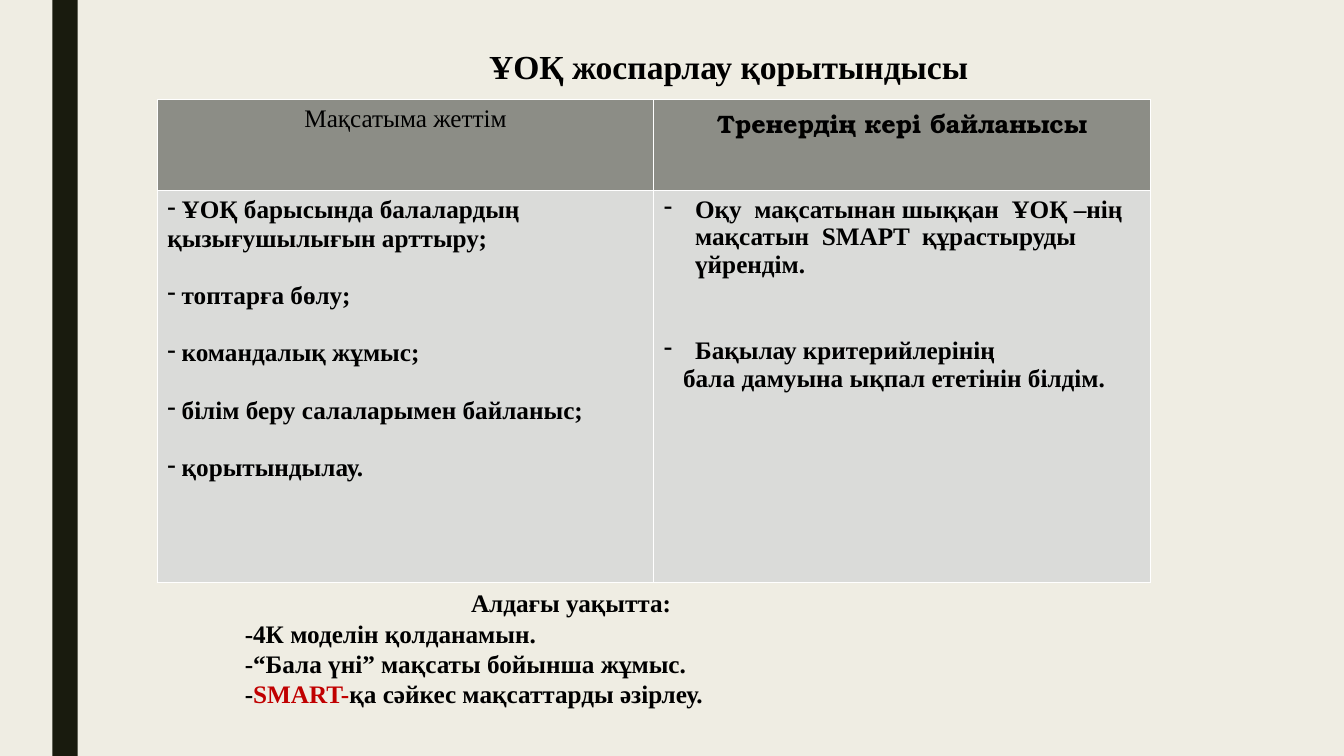
import pptx
import pptx.util
import pptx.dml.color
import pptx.enum.shapes
import pptx.enum.text
import pptx.oxml
import pptx.oxml.ns
from pptx.util import Inches

SERIF = "Times New Roman"
ALIGN = pptx.enum.text.PP_ALIGN
GOALS = [
    "ҰОҚ барысында балалардың қызығушылығын арттыру;",
    "топтарға бөлу;",
    "командалық жұмыс;",
    "білім беру салаларымен байланыс;",
    "қорытындылау.",
]
NOTES = [
    "Оқу  мақсатынан шыққан  ҰОҚ –нің  мақсатын  SMAPT  құрастыруды үйрендім.",
    "Бақылау критерийлерінің",
]
PLANS = [
    [("-4К моделін қолданамын.", "000000")],
    [("-“Бала үні” мақсаты бойынша жұмыс.", "000000")],
    [("-", "000000"), ("SMART-", "C00000"),
     ("қа сәйкес мақсаттарды әзірлеу.", "000000")],
]


def paint(fill, tone):
    """Fill with a solid colour given as hex."""
    fill.solid()
    fill.fore_color.rgb = pptx.dml.color.RGBColor.from_string(tone)


def write(para, text, size=18, bold=True, face=SERIF, tone="000000"):
    """Add one formatted run to a paragraph."""
    run = para.add_run()
    run.text = text
    run.font.size = pptx.util.Pt(size)
    run.font.bold = bold
    run.font.name = face
    paint(run.font.fill, tone)


def extend(frame, first):
    """Return the first paragraph, or a new one after it."""
    return frame.paragraphs[0] if first else frame.add_paragraph()


def inset(para, left=0, hang=0, mark=None):
    """Set the indents of a paragraph and its bullet."""
    props = para._p.get_or_add_pPr()
    props.set("marL", str(Inches(left)))
    props.set("indent", str(Inches(-hang)))
    if mark:
        bullet = props.makeelement(pptx.oxml.ns.qn("a:buChar"), {"char": mark})
        props.append(bullet)


def edge(cell):
    """Draw thin white borders round a cell."""
    props = cell._tc.get_or_add_tcPr()
    for spot, side in enumerate("LRTB"):
        line = pptx.oxml.parse_xml(
            f'<a:ln{side} {pptx.oxml.ns.nsdecls("a")} w="12700"><a:solidFill>'
            f'<a:srgbClr val="FFFFFF"/></a:solidFill></a:ln{side}>')
        props.insert(spot, line)


def add_bar(slide, left, top, width, height):
    """Draw the dark vertical bar."""
    bar = slide.shapes.add_shape(
        pptx.enum.shapes.MSO_SHAPE.RECTANGLE, left, top, width, height)
    bar.shadow.inherit = False
    paint(bar.fill, "191B0E")
    bar.line.fill.background()


def add_title(slide, left, top, width, height):
    """Place and write the title."""
    title = slide.shapes.title
    title.left, title.top, title.width, title.height = left, top, width, height
    frame = title.text_frame
    frame.word_wrap = False
    frame.auto_size = pptx.enum.text.MSO_AUTO_SIZE.NONE
    frame.vertical_anchor = pptx.enum.text.MSO_ANCHOR.TOP
    para = frame.paragraphs[0]
    para.alignment = ALIGN.LEFT
    write(para, "ҰОҚ жоспарлау қорытындысы", 24)


def add_grid(slide, left, top, width, height):
    """Build the table of goals and feedback."""
    grid = slide.shapes.add_table(2, 2, left, top, width, height).table
    grid.rows[0].height = Inches(0.9)
    grid.rows[1].height = height - Inches(0.9)
    for row, tone in enumerate(["8C8D86", "DADBD9"]):
        for col in range(2):
            paint(grid.cell(row, col).fill, tone)
            edge(grid.cell(row, col))
    heads = [("Мақсатыма жеттім", False, SERIF),
             ("Тренердің кері байланысы", True, "TeX Gyre Bonum")]
    for col, (text, bold, face) in enumerate(heads):
        para = grid.cell(0, col).text_frame.paragraphs[0]
        para.alignment = ALIGN.CENTER
        write(para, text, 18, bold, face)
    fill_goals(grid.cell(1, 0).text_frame)
    fill_notes(grid.cell(1, 1).text_frame)


def fill_goals(frame):
    """List the goals with even gaps."""
    for spot, goal in enumerate(GOALS):
        para = extend(frame, spot == 0)
        para.space_after = pptx.util.Pt(20)
        inset(para, mark="-")
        write(para, " ", bold=False, face="Karla")
        write(para, goal)


def fill_notes(frame):
    """List the feedback with hanging dashes."""
    for spot, note in enumerate(NOTES):
        para = extend(frame, spot == 0)
        para.space_before = pptx.util.Pt(41 * spot)
        inset(para, 0.31, 0.31, "-")
        write(para, note)
    para = frame.add_paragraph()
    inset(para, 0.19)
    write(para, "бала дамуына ықпал ететінін білдім.")


def add_plans(slide, left, top, width, height):
    """Write the plans under their heading."""
    frame = slide.shapes.add_textbox(left, top, width, height).text_frame
    frame.word_wrap = True
    head = frame.paragraphs[0]
    head.alignment = ALIGN.CENTER
    write(head, "Алдағы уақытта:")
    for plan in PLANS:
        para = frame.add_paragraph()
        for text, tone in plan:
            write(para, text, tone=tone)


def main():
    """Build and save the slide."""
    deck = pptx.Presentation()
    deck.slide_width, deck.slide_height = Inches(13.33), Inches(7.5)
    slide = deck.slides.add_slide(deck.slide_layouts[5])
    paint(slide.background.fill, "EFEDE3")
    add_bar(slide, Inches(0.52), 0, Inches(0.25), deck.slide_height)
    add_title(slide, Inches(4.75), Inches(0.41), Inches(5), Inches(0.5))
    add_grid(slide, Inches(1.56), Inches(0.99), Inches(9.85), Inches(4.79))
    add_plans(slide, Inches(2.33), Inches(5.78), Inches(6.67), Inches(1.31))
    deck.save("out.pptx")


if __name__ == "__main__":
    main()
